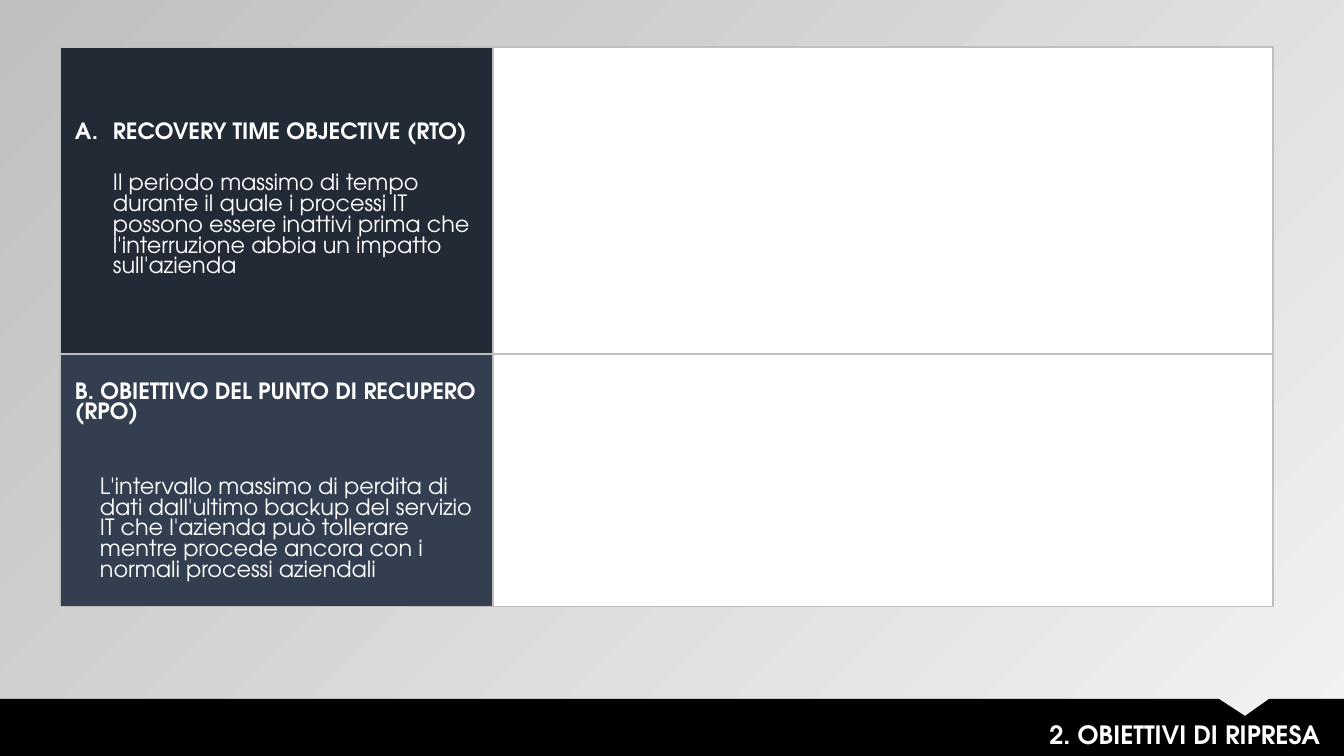
from lxml.etree import SubElement
from pptx import Presentation
from pptx.dml.color import RGBColor
from pptx.enum.text import MSO_ANCHOR, MSO_AUTO_SIZE, PP_ALIGN
from pptx.oxml.ns import qn
from pptx.util import Emu, Pt

SCALE = 12192000 / 1344
FONT = "TeX Gyre Adventor"
WHITE = RGBColor(0xFF, 0xFF, 0xFF)
BLACK = RGBColor(0, 0, 0)
DARK_NAVY = RGBColor(0x22, 0x2A, 0x35)
NAVY = RGBColor(0x33, 0x3F, 0x50)
LIGHT_GRAY = RGBColor(0xF2, 0xF2, 0xF2)
GRAY = RGBColor(0xBF, 0xBF, 0xBF)

RTO_TITLE = "RECOVERY TIME OBJECTIVE (RTO)"
RTO_TEXT = (
    "Il periodo massimo di tempo durante il quale i processi IT possono essere "
    "inattivi prima che l'interruzione abbia un impatto sull'azienda"
)
RPO_TITLE = "B. OBIETTIVO DEL PUNTO DI RECUPERO (RPO)"
RPO_TEXT = (
    "L'intervallo massimo di perdita di dati dall'ultimo backup del servizio IT "
    "che l'azienda può tollerare mentre procede ancora con i normali processi aziendali"
)


def px(value):
    return Emu(round(value * SCALE))


def format_run(run, size, bold):
    run.font.name = FONT
    run.font.size = Pt(size)
    run.font.bold = bold
    run.font.color.rgb = WHITE


def paint_background(slide):
    fill = slide.background.fill
    fill.gradient()
    fill.gradient_angle = 135
    for stop, position, color in zip(fill.gradient_stops, (0, 1), (LIGHT_GRAY, GRAY)):
        stop.position = position
        stop.color.rgb = color


def set_borders(cell, hidden=""):
    properties = cell._tc.get_or_add_tcPr()
    for index, side in enumerate("LRTB"):
        line = SubElement(properties, qn(f"a:ln{side}"), w=str(Pt(1)))
        if side == hidden:
            SubElement(line, qn("a:noFill"))
        else:
            solid = SubElement(line, qn("a:solidFill"))
            SubElement(solid, qn("a:srgbClr"), val=str(GRAY))
        properties.insert(index, line)


def fill_cell(cell, color, hidden=""):
    cell.fill.solid()
    cell.fill.fore_color.rgb = color
    set_borders(cell, hidden)


def write_cell(cell, text, bolds, left=15):
    cell.vertical_anchor = MSO_ANCHOR.MIDDLE
    cell.margin_left = px(left)
    cell.margin_top = cell.margin_right = cell.margin_bottom = px(15)
    paragraph = cell.text_frame.paragraphs[0]
    paragraph.text = text
    for run, bold in zip(paragraph.runs, bolds):
        format_run(run, 16, bold)
    return paragraph


def number_paragraph(paragraph, indent):
    properties = paragraph._p.get_or_add_pPr()
    properties.set("marL", str(px(indent)))
    properties.set("indent", str(-px(indent)))
    SubElement(properties, qn("a:buFont"), typeface="+mj-lt")
    SubElement(properties, qn("a:buAutoNum"), type="alphaUcPeriod")


def add_objectives_table(slide):
    widths, heights = (433, 780), (307, 99, 154)
    frame = slide.shapes.add_table(
        3, 2, px(60), px(47), px(sum(widths)), px(sum(heights))
    )
    table = frame.table
    table.first_row = table.horz_banding = False
    for column, width in zip(table.columns, widths):
        column.width = px(width)
    for row, height in zip(table.rows, heights):
        row.height = px(height)

    for index, (color, hidden) in enumerate(
        ((DARK_NAVY, ""), (NAVY, "B"), (NAVY, "T"))
    ):
        fill_cell(table.cell(index, 0), color, hidden)
        fill_cell(table.cell(index, 1), WHITE)
    table.cell(1, 1).merge(table.cell(2, 1))

    rto = write_cell(table.cell(0, 0), f"{RTO_TITLE}\v\v{RTO_TEXT}", (True, False))
    number_paragraph(rto, 38)
    write_cell(table.cell(1, 0), RPO_TITLE, (True,))
    write_cell(table.cell(2, 0), RPO_TEXT, (False,), left=40)


def add_footer_band(slide):
    builder = slide.shapes.build_freeform(0, 699, scale=SCALE)
    builder.add_line_segments(
        [(1219, 699), (1245, 716), (1269, 699), (1344, 699), (1344, 756), (0, 756)]
    )
    band = builder.convert_to_shape()
    band.shadow.inherit = False
    band.fill.solid()
    band.fill.fore_color.rgb = BLACK
    band.line.fill.background()


def add_footer_title(slide, text):
    box = slide.shapes.add_textbox(px(417), px(714), px(913), px(40))
    box.text_frame.word_wrap = True
    box.text_frame.auto_size = MSO_AUTO_SIZE.SHAPE_TO_FIT_TEXT
    paragraph = box.text_frame.paragraphs[0]
    paragraph.text = text
    paragraph.alignment = PP_ALIGN.RIGHT
    format_run(paragraph.runs[0], 18, True)


def main():
    presentation = Presentation()
    presentation.slide_width = px(1344)
    presentation.slide_height = px(756)
    slide = presentation.slides.add_slide(presentation.slide_layouts[6])
    paint_background(slide)
    add_objectives_table(slide)
    add_footer_band(slide)
    add_footer_title(slide, "2. OBIETTIVI DI RIPRESA")
    presentation.save("out.pptx")


if __name__ == "__main__":
    main()
